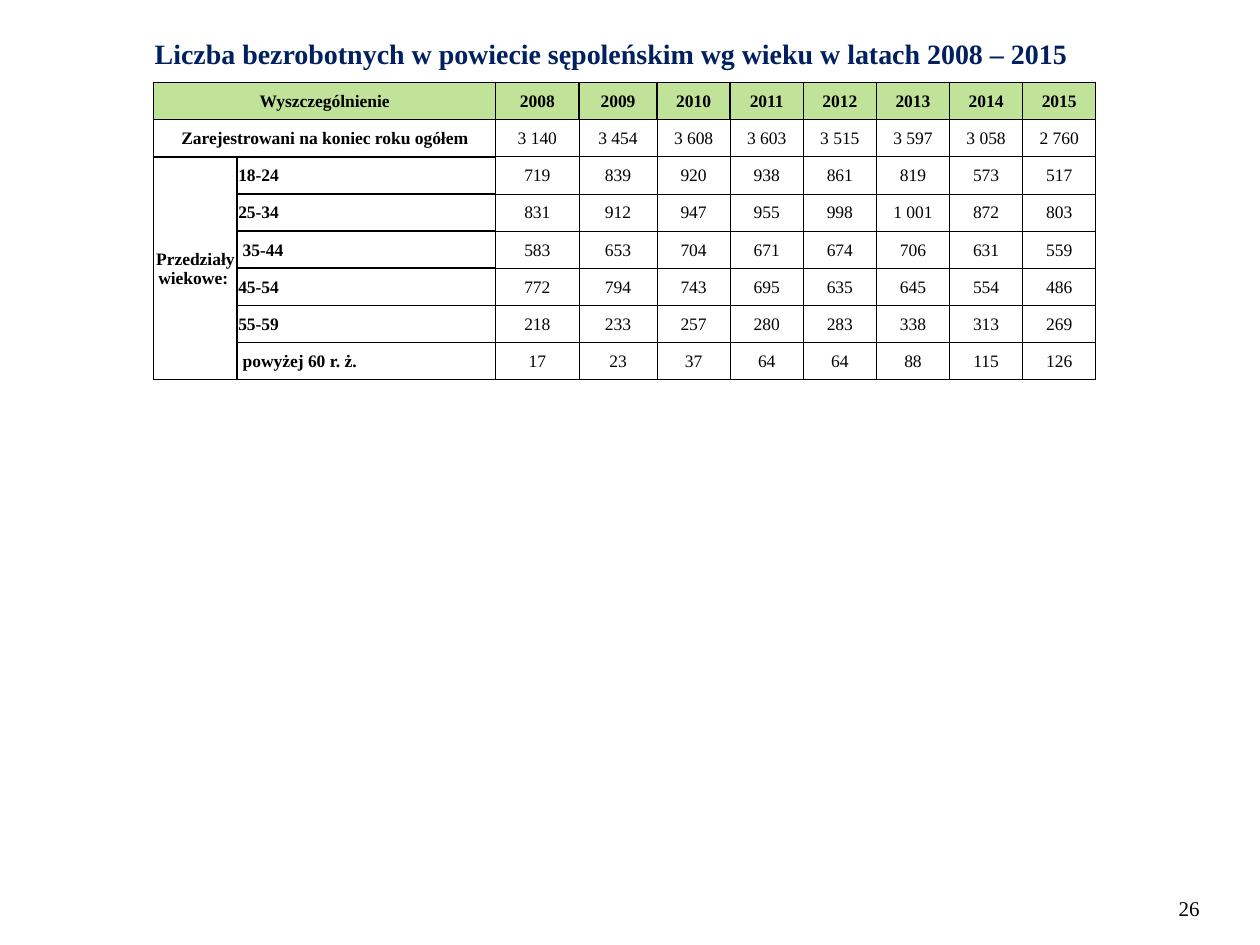
import pptx
import pptx.dml.color
import pptx.enum.text
import pptx.oxml
import pptx.oxml.ns
import pptx.util

Pt = pptx.util.Pt
ALIGN = pptx.enum.text.PP_ALIGN
ANCHOR = pptx.enum.text.MSO_ANCHOR

COLORS = {"ink": "000000", "title": "002060", "header": "C0E399", "label": "FFFFFF"}

TITLE = "Liczba bezrobotnych w powiecie sępoleńskim wg wieku w latach 2008 – 2015"
ROWS = [
    ["Wyszczególnienie", "", *map(str, range(2008, 2016))],
    ["Zarejestrowani na koniec roku ogółem", "",
     "3 140", "3 454", "3 608", "3 603", "3 515", "3 597", "3 058", "2 760"],
    ["Przedziały wiekowe: ", "18-24", "719", "839", "920", "938", "861", "819", "573", "517"],
    ["", "25-34", "831", "912", "947", "955", "998", "1 001", "872", "803"],
    ["", " 35-44", "583", "653", "704", "671", "674", "706", "631", "559"],
    ["", "45-54", "772", "794", "743", "695", "635", "645", "554", "486"],
    ["", "55-59", "218", "233", "257", "280", "283", "338", "313", "269"],
    ["", " powyżej 60 r. ż.", "17", "23", "37", "64", "64", "88", "115", "126"],
]
MERGES = [((0, 0), (0, 1)), ((1, 0), (1, 1)), ((2, 0), (7, 0))]
COLUMN_WIDTHS = [47.7, 147.8, 47.6, 44.6] + [41.8] * 6
ROW_HEIGHT = 21.25
LABEL_COLUMNS = 2


def rgb(name):
    return pptx.dml.color.RGBColor.from_string(COLORS[name])


def write(frame, text, font="Times New Roman", size=10, color="ink", bold=False, align=ALIGN.LEFT):
    para = frame.paragraphs[0]
    para.alignment = align
    span = para.add_run()
    span.text = text
    span.font.name = font
    span.font.size = Pt(size)
    span.font.bold = bold
    span.font.color.rgb = rgb(color)


class SlideBuilder:
    thick = 1
    thin = 0.5
    inset = 0.7

    def __init__(self, page):
        self.page = page

    def title(self, text, left, top, width, height):
        box = self.page.shapes.title
        box.left, box.top, box.width, box.height = map(Pt, (left, top, width, height))
        box.text_frame.vertical_anchor = ANCHOR.TOP
        box.text_frame.auto_size = pptx.enum.text.MSO_AUTO_SIZE.NONE
        write(box.text_frame, text, size=16, color="title", bold=True)

    def text_box(self, text, left, top, width, height, **style):
        box = self.page.shapes.add_textbox(*map(Pt, (left, top, width, height)))
        box.text_frame.word_wrap = True
        write(box.text_frame, text, **style)

    def borders(self, cell, widths):
        properties = cell._tc.get_or_add_tcPr()
        for side, width in widths.items():
            properties.append(pptx.oxml.parse_xml(
                f'<a:ln{side} {pptx.oxml.ns.nsdecls("a")} w="{Pt(width)}"><a:solidFill>'
                f'<a:srgbClr val="{COLORS["ink"]}"/></a:solidFill></a:ln{side}>'))

    def cell(self, cell, text, row, column):
        header = row == 0
        label = column < LABEL_COLUMNS
        heading = header or label
        heavy = {
            "L": heading or column == LABEL_COLUMNS,
            "R": heading,
            "T": heading or row == 1,
            "B": heading or row == len(ROWS) - 1,
        }
        self.borders(cell, {side: self.thick if on else self.thin for side, on in heavy.items()})
        if heading:
            cell.fill.solid()
            cell.fill.fore_color.rgb = rgb("header" if header else "label")
        else:
            cell.fill.background()
        cell.margin_left = cell.margin_top = cell.margin_right = Pt(self.inset)
        cell.margin_bottom = 0
        cell.vertical_anchor = ANCHOR.MIDDLE
        if text:
            age_group = column == 1
            write(cell.text_frame, text, bold=heading,
                  align=ALIGN.LEFT if age_group else ALIGN.CENTER)

    def table(self, rows, left, top):
        size = (sum(COLUMN_WIDTHS), ROW_HEIGHT * len(rows))
        table = self.page.shapes.add_table(
            len(rows), len(COLUMN_WIDTHS), *map(Pt, (left, top, *size))).table
        table.first_row = table.horz_banding = False
        for column, width in zip(table.columns, COLUMN_WIDTHS):
            column.width = Pt(width)
        for row in table.rows:
            row.height = Pt(ROW_HEIGHT)
        for first, last in MERGES:
            table.cell(*first).merge(table.cell(*last))
        for row, values in enumerate(rows):
            for column, text in enumerate(values):
                self.cell(table.cell(row, column), text, row, column)


def main():
    deck = pptx.Presentation()
    deck.slide_width, deck.slide_height = Pt(720), Pt(540)
    builder = SlideBuilder(deck.slides.add_slide(deck.slide_layouts[5]))
    builder.table(ROWS, 87.8, 47.1)
    builder.title(TITLE, 81.2, 17.3, 561.6, 26.6)
    builder.text_box("26", 666.5, 508.3, 28, 21.8, size=12)
    deck.save("out.pptx")


if __name__ == "__main__":
    main()
